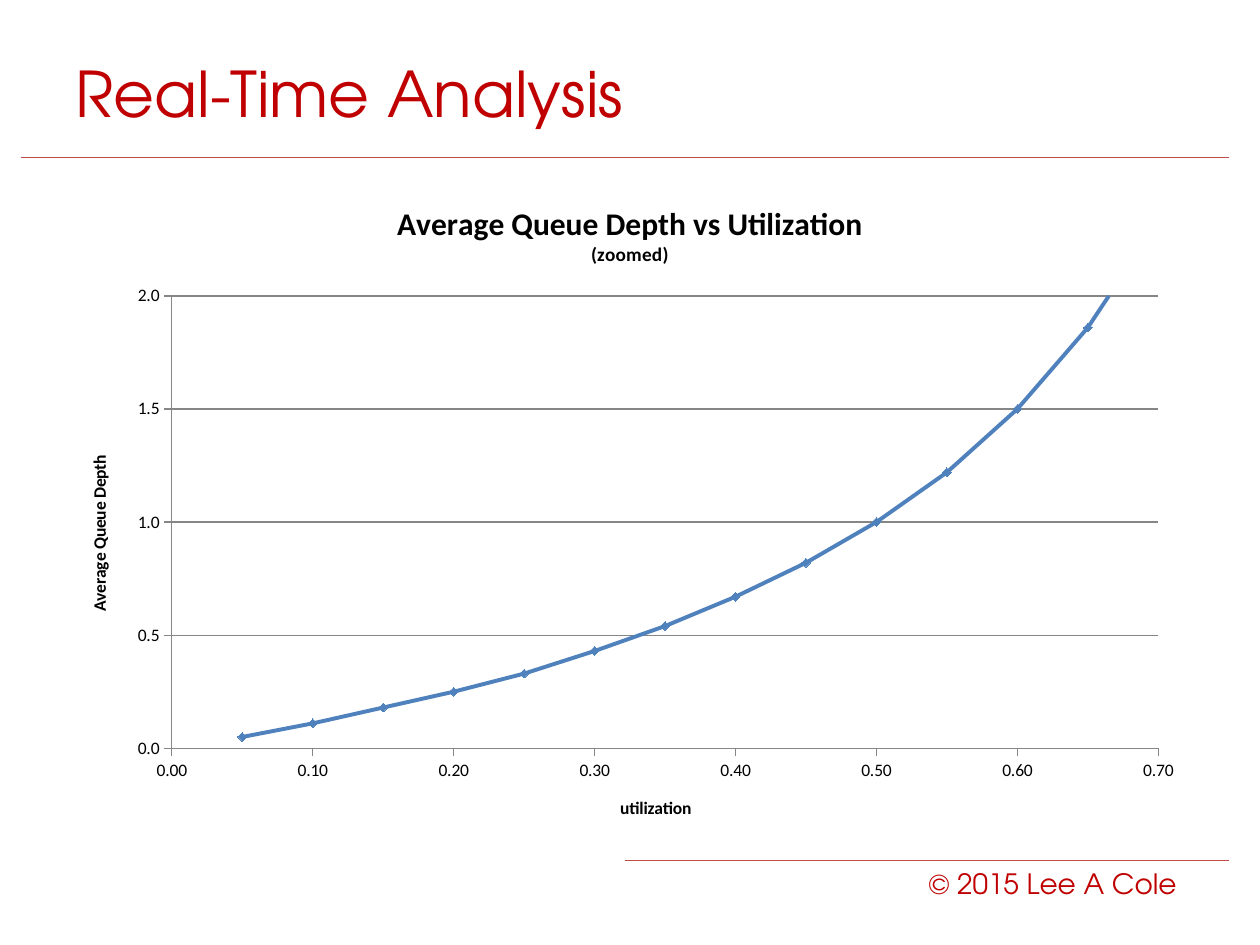
from lxml.etree import SubElement
from pptx import Presentation
from pptx.chart.data import XyChartData
from pptx.dml.color import RGBColor
from pptx.enum.chart import XL_CHART_TYPE, XL_MARKER_STYLE, XL_TICK_MARK
from pptx.enum.shapes import MSO_CONNECTOR
from pptx.enum.text import MSO_ANCHOR, PP_ALIGN
from pptx.oxml import parse_xml
from pptx.oxml.ns import nsdecls, qn
from pptx.util import Inches, Pt

RED = RGBColor(0xC0, 0x00, 0x00)
RULE_RED = RGBColor(0xBF, 0x4C, 0x48)
BLUE = RGBColor(0x4F, 0x81, 0xBD)
GRAY = RGBColor(0x86, 0x86, 0x86)
BLACK = RGBColor(0x00, 0x00, 0x00)
HEADING_FONT = "TeX Gyre Adventor"
CHART_FONT = "Calibri"


def style_font(font, name, size, color, bold=False):
    """Set the face, size, colour and weight of a font."""
    font.name = name
    font.size = Pt(size)
    font.color.rgb = color
    font.bold = bold


def add_text(slide, box, text, size, align=PP_ALIGN.LEFT, anchor=MSO_ANCHOR.TOP):
    """Add one line of heading-font text in the given box."""
    shape = slide.shapes.add_textbox(*map(Inches, box))
    frame = shape.text_frame
    frame.word_wrap = True
    frame.vertical_anchor = anchor
    paragraph = frame.paragraphs[0]
    paragraph.alignment = align
    run = paragraph.add_run()
    run.text = text
    style_font(run.font, HEADING_FONT, size, RED)


def add_rule(slide, left, right, top):
    """Add a thin horizontal rule."""
    ends = map(Inches, (left, top, right, top))
    connector = slide.shapes.add_connector(MSO_CONNECTOR.STRAIGHT, *ends)
    connector.line.color.rgb = RULE_RED
    connector.line.width = Pt(0.75)
    SubElement(connector._element.spPr, qn("a:effectLst"))


def add_header(slide, box):
    """Place the slide title and the rule below it."""
    add_text(slide, box, "Real-Time Analysis", 36, anchor=MSO_ANCHOR.MIDDLE)
    add_rule(slide, 0.17, 9.75, box[1] + box[3] + 0.08)


def add_footer(slide, box):
    """Place the copyright line and the rule above it."""
    add_rule(slide, 4.96, 9.75, box[1])
    add_text(slide, box, "© 2015 Lee A Cole ", 16, align=PP_ALIGN.RIGHT)


def write_chart_text(holder, lines):
    """Write bold text and size pairs as the paragraphs of a chart title."""
    frame = holder.text_frame
    for index, (text, size) in enumerate(lines):
        paragraph = frame.add_paragraph() if index else frame.paragraphs[0]
        run = paragraph.add_run()
        run.text = text
        style_font(run.font, CHART_FONT, size, BLACK, bold=True)


def format_axis(axis, title, maximum, unit, number_format):
    """Set the scale, labels, line and title of an axis."""
    axis.minimum_scale = 0
    axis.maximum_scale = maximum
    axis.major_unit = unit
    axis.major_tick_mark = XL_TICK_MARK.OUTSIDE
    axis.minor_tick_mark = XL_TICK_MARK.NONE
    axis.tick_labels.number_format = number_format
    axis.tick_labels.number_format_is_linked = False
    axis.format.line.color.rgb = GRAY
    axis.format.line.width = Pt(0.75)
    write_chart_text(axis.axis_title, [(title, 10)])


def set_plot_area(chart, left, top, width, height):
    """Fix the inner plot area as fractions of the chart."""
    plot_area = chart._chartSpace.chart.plotArea
    for layout in plot_area.findall(qn("c:layout")):
        plot_area.remove(layout)
    plot_area.insert(0, parse_xml(
        f'<c:layout {nsdecls("c")}><c:manualLayout><c:layoutTarget val="inner"/>'
        '<c:xMode val="edge"/><c:yMode val="edge"/>'
        f'<c:x val="{left}"/><c:y val="{top}"/><c:w val="{width}"/><c:h val="{height}"/>'
        '</c:manualLayout></c:layout>'))


def add_queue_chart(slide, box):
    """Place the chart of queue depth, u / (1 - u), against utilization u."""
    data = XyChartData()
    points = data.add_series("Series 1")
    for percent in [*range(5, 100, 5), 99]:
        points.add_data_point(percent / 100, round(percent / (100 - percent), 2))
    frame = slide.shapes.add_chart(
        XL_CHART_TYPE.XY_SCATTER_SMOOTH, *map(Inches, box), data)
    chart = frame.chart
    style_font(chart.font, CHART_FONT, 10, BLACK)
    chart.has_legend = False
    chart.has_title = True
    write_chart_text(chart.chart_title, [
        ("Average Queue Depth vs Utilization", 18), ("(zoomed)", 11)])

    format_axis(chart.category_axis, "utilization", 0.7, 0.1, "0.00")
    format_axis(chart.value_axis, "Average Queue Depth", 2, 0.5, "0.0")
    chart.category_axis.has_major_gridlines = False
    chart.value_axis.has_major_gridlines = True
    gridline = chart.value_axis.major_gridlines.format.line
    gridline.color.rgb = GRAY
    gridline.width = Pt(0.75)

    chart.plots[0].vary_by_categories = False
    series = chart.plots[0].series[0]
    series.smooth = True
    series.format.line.color.rgb = BLUE
    series.format.line.width = Pt(2.25)
    series.marker.style = XL_MARKER_STYLE.DIAMOND
    series.marker.size = 5
    series.marker.format.fill.solid()
    series.marker.format.fill.fore_color.rgb = BLUE
    series.marker.format.line.color.rgb = BLUE
    set_plot_area(chart, 0.096, 0.176, 0.87, 0.68)


def main():
    """Build the slide and save it."""
    presentation = Presentation()
    presentation.slide_width = Inches(10)
    presentation.slide_height = Inches(7.5)
    slide = presentation.slides.add_slide(presentation.slide_layouts[6])
    add_header(slide, (0.5, 0.3, 9, 0.87))
    add_footer(slide, (5.5, 6.83, 4, 0.37))
    add_queue_chart(slide, (0.5, 1.42, 9, 5.28))
    presentation.save("out.pptx")


if __name__ == "__main__":
    main()
